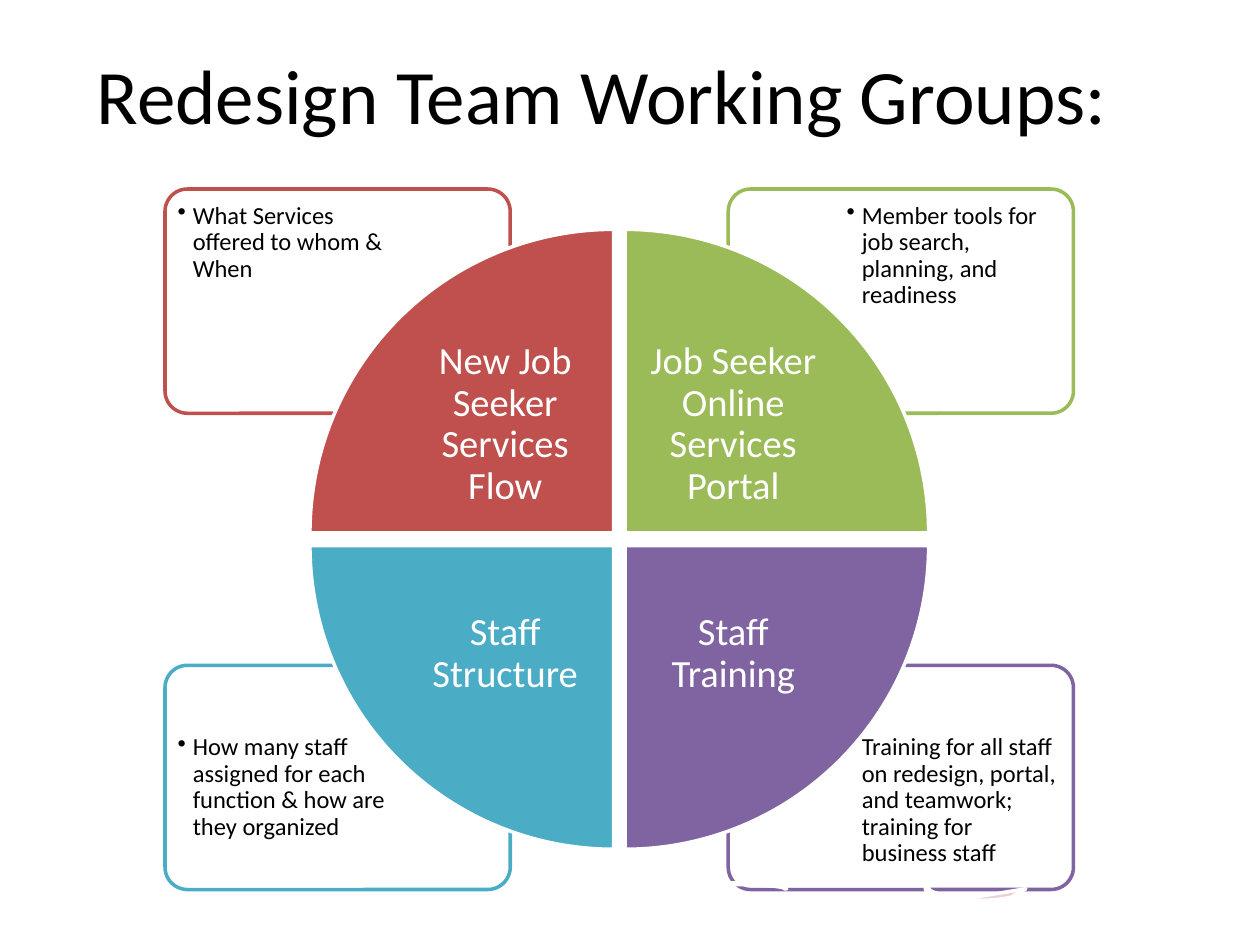
from collections import namedtuple

from lxml.etree import SubElement
from pptx import Presentation
from pptx.dml.color import RGBColor
from pptx.enum.shapes import MSO_SHAPE as Shape
from pptx.enum.text import MSO_ANCHOR as Anchor, PP_ALIGN as Align
from pptx.oxml.ns import qn
from pptx.util import Inches, Pt

Box = namedtuple("Box", "left top width height")
Quadrant = namedtuple("Quadrant", "right bottom color rotation title detail")

COLORS = {
    "black": "000000",
    "white": "FFFFFF",
    "red": "C0504D",
    "green": "9BBB59",
    "purple": "8064A2",
    "teal": "4BACC6",
    "pink": "E8D0D0",
}

QUADRANTS = [
    Quadrant(True, True, "purple", 180, "Staff Training",
             "Training for all staff on redesign, portal, and teamwork; "
             "training for business staff"),
    Quadrant(False, True, "teal", 270, "Staff Structure",
             "How many staff assigned for each function & how are they organized"),
    Quadrant(True, False, "green", 90, "Job Seeker Online Services Portal",
             "Member tools for job search, planning, and readiness"),
    Quadrant(False, False, "red", 0, "New Job Seeker Services Flow",
             "What Services offered to whom & When"),
]


def to_lengths(box):
    return [Inches(value) for value in box]


def color_of(name):
    return RGBColor.from_string(COLORS[name])


def corner_box(box, quadrant, inset_x, inset_y, width, height):
    left = box.width - inset_x - width if quadrant.right else inset_x
    top = box.height - inset_y - height if quadrant.bottom else inset_y
    return Box(box.left + left, box.top + top, width, height)


def add_outlined_shape(slide, kind, box, fill, line):
    shape = slide.shapes.add_shape(kind, *to_lengths(box))
    shape.shadow.inherit = False
    shape.fill.solid()
    shape.fill.fore_color.rgb = color_of(fill)
    shape.line.color.rgb = color_of(line)
    shape.line.width = Pt(2)
    return shape


def add_text(slide, box, text, size, color, margins, anchor=Anchor.TOP, **paragraph_format):
    frame = slide.shapes.add_textbox(*to_lengths(box)).text_frame
    frame_format = {"word_wrap": True, "vertical_anchor": anchor}
    sides = ("left", "top", "right", "bottom")
    frame_format.update({f"margin_{side}": Inches(value) for side, value in zip(sides, margins)})
    for name, value in frame_format.items():
        setattr(frame, name, value)
    paragraph = frame.paragraphs[0]
    for name, value in paragraph_format.items():
        setattr(paragraph, name, value)
    run = paragraph.add_run()
    run.text = text
    for name, value in {"name": "Calibri", "size": Pt(size)}.items():
        setattr(run.font, name, value)
    run.font.color.rgb = color_of(color)
    return paragraph


def add_bullet(paragraph, indent):
    properties = paragraph._p.get_or_add_pPr()
    properties.set("marL", str(Inches(indent)))
    properties.set("indent", str(-Inches(indent)))
    SubElement(properties, qn("a:buChar"), char="•")


def add_detail_card(slide, box, quadrant):
    card_box = corner_box(box, quadrant, 0, 0, 2.74, 1.78)
    card = add_outlined_shape(slide, Shape.ROUNDED_RECTANGLE, card_box, "white", quadrant.color)
    card.adjustments[0] = 0.1
    text_box = corner_box(box, quadrant, 0.03, 0.04, 1.84, 1.26)
    paragraph = add_text(slide, text_box, quadrant.detail, 14, "black", [0.07] * 4,
                         line_spacing=0.9)
    add_bullet(paragraph, 0.12)


def add_wedge(slide, box, quadrant):
    wedge_box = corner_box(box, quadrant, 1.15, 0.32, 2.41, 2.41)
    wedge = add_outlined_shape(slide, Shape.PIE_WEDGE, wedge_box, quadrant.color, "white")
    wedge.rotation = quadrant.rotation
    text_box = corner_box(box, quadrant, 1.85, 1.02, 1.7, 1.7)
    add_text(slide, text_box, quadrant.title, 22, "white", [0.17] * 4, Anchor.MIDDLE,
             alignment=Align.CENTER, line_spacing=0.9)


def add_cycle_arrow(slide, box, rotation):
    arrow = add_outlined_shape(slide, Shape.CIRCULAR_ARROW, box, "pink", "white")
    arrow.rotation = rotation
    arrow._element.spPr.find(qn("a:xfrm")).set("flipV", "1")


def add_cycle_matrix(slide, box):
    for add_part in (add_detail_card, add_wedge):
        for quadrant in QUADRANTS:
            add_part(slide, box, quadrant)
    add_cycle_arrow(slide, Box(box.left + 6.02, box.top + 5.44, 0.84, 0.22), 0)
    add_cycle_arrow(slide, Box(box.left + 4.11, box.top + 5.5, 0.83, 0.11), 180)


def add_title(slide, box):
    add_text(slide, box, "Redesign Team Working Groups:", 44, "black", [0.1, 0.05, 0.1, 0.05])


def main():
    presentation = Presentation()
    presentation.slide_width = Inches(10)
    presentation.slide_height = Inches(7.5)
    slide = presentation.slides.add_slide(presentation.slide_layouts[6])
    add_cycle_matrix(slide, Box(1.31, 1.5, 7.21, 5.56))
    add_title(slide, Box(0.67, 0.33, 8.5, 0.84))
    presentation.save("out.pptx")


if __name__ == "__main__":
    main()
